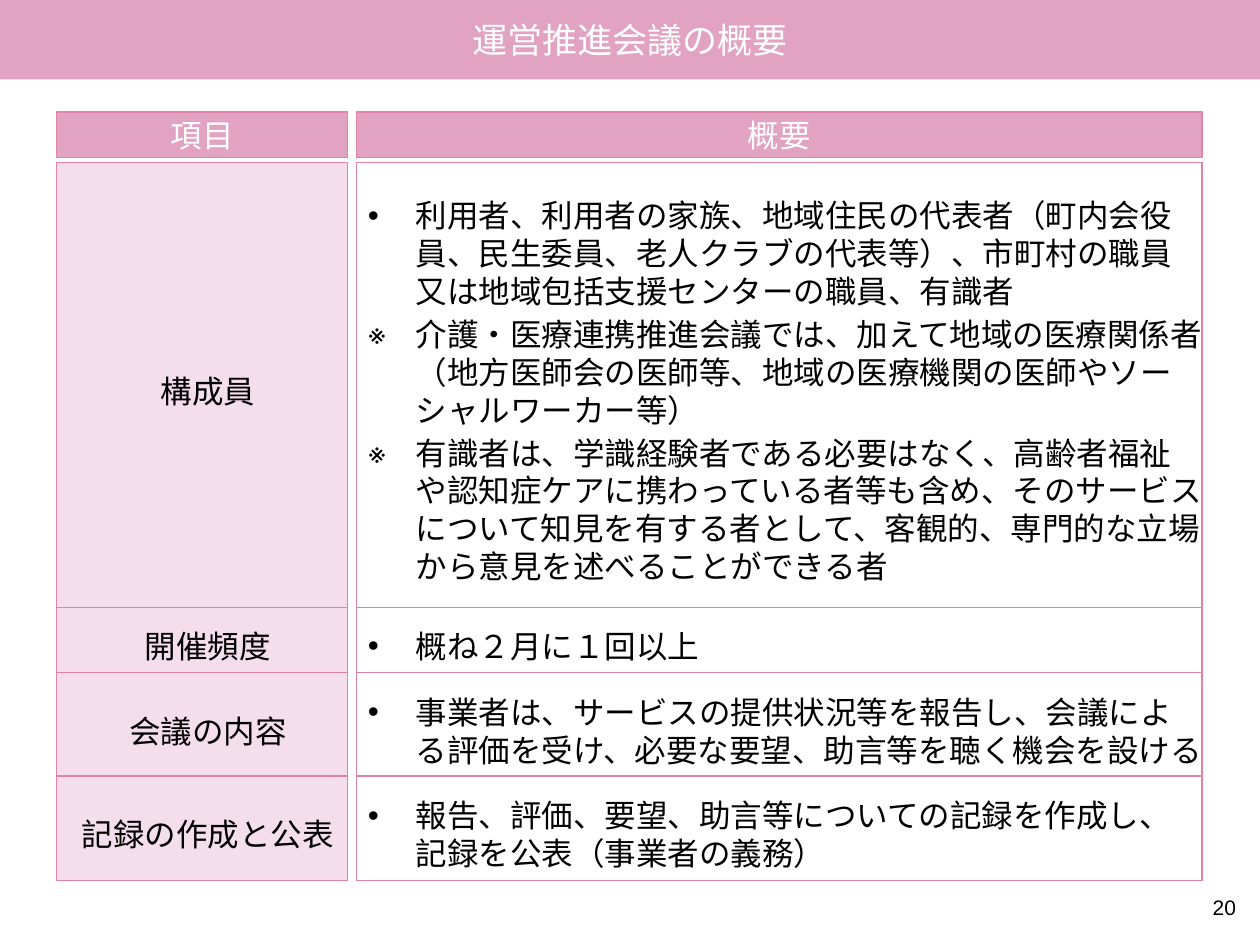
from lxml import etree
from pptx import Presentation
from pptx.dml.color import RGBColor
from pptx.enum.shapes import MSO_SHAPE
from pptx.enum.text import MSO_ANCHOR, MSO_AUTO_SIZE, PP_ALIGN
from pptx.oxml.ns import qn
from pptx.util import Inches, Pt

RECT = MSO_SHAPE.RECTANGLE
MIDDLE = MSO_ANCHOR.MIDDLE
NO_FIT = MSO_AUTO_SIZE.NONE
CENTER, LEFT, RIGHT = PP_ALIGN.CENTER, PP_ALIGN.LEFT, PP_ALIGN.RIGHT

JP_FONT = "Noto Sans CJK JP"
PINK, PALE, BORDER = "E2A3C2", "F5DEEC", "E282A8"
WHITE, BLACK = "FFFFFF", "000000"

LABEL_X, LABEL_W = 0.45, 2.31
BODY_X, BODY_W = 2.83, 6.71
HEADER_Y, HEADER_H = 0.89, 0.36
INSET = 0.09

# top, height, label, [(bullet, text), ...]
ROWS = [
    (1.29, 3.53, "構成員", [
        ("•", "利用者、利用者の家族、地域住民の代表者（町内会役員、民生委員、老人クラブの代表等）、"
              "市町村の職員又は地域包括支援センターの職員、有識者"),
        ("※", "介護・医療連携推進会議では、加えて地域の医療関係者"
              "（地方医師会の医師等、地域の医療機関の医師やソーシャルワーカー等）"),
        ("※", "有識者は、学識経験者である必要はなく、高齢者福祉や認知症ケアに携わっている者等も含め、"
              "そのサービスについて知見を有する者として、客観的、専門的な立場から意見を述べることができる者"),
    ]),
    (4.82, 0.52, "開催頻度", [("•", "概ね２月に１回以上")]),
    (5.34, 0.83, "会議の内容", [
        ("•", "事業者は、サービスの提供状況等を報告し、会議による評価を受け、"
              "必要な要望、助言等を聴く機会を設ける"),
    ]),
    (6.16, 0.83, "記録の作成と公表", [
        ("•", "報告、評価、要望、助言等についての記録を作成し、記録を公表（事業者の義務）"),
    ]),
]


def rgb(value):
    return RGBColor.from_string(value)


def set_frame(tf, inset=0):
    tf.word_wrap = True
    tf.auto_size = NO_FIT
    tf.vertical_anchor = MIDDLE
    tf.margin_left = tf.margin_top = Inches(inset)
    tf.margin_right = tf.margin_bottom = 0


def write(p, text, size, color, align, font=JP_FONT):
    p.text = text
    p.alignment = align
    p.font.size = Pt(size)
    p.font.name = font
    p.font.color.rgb = rgb(color)
    # East Asian characters take their typeface from a:ea
    etree.SubElement(p._p.pPr.find(qn("a:defRPr")), qn("a:ea"), typeface=font)


def add_bullet(p, char):
    """Give the paragraph a hanging indent and a bullet character."""
    pPr = p._p.get_or_add_pPr()
    pPr.set("marL", str(Inches(0.38)))
    pPr.set("indent", str(-Inches(0.38)))
    defaults = pPr.find(qn("a:defRPr"))
    for tag, name, value in (("a:buFont", "typeface", "Arial"), ("a:buChar", "char", char)):
        bullet = etree.Element(qn(tag))
        bullet.set(name, value)
        defaults.addprevious(bullet)


def add_box(slide, x, y, w, h, fill, inset=0):
    s = slide.shapes.add_shape(RECT, Inches(x), Inches(y), Inches(w), Inches(h))
    s.shadow.inherit = False
    s.fill.solid()
    s.fill.fore_color.rgb = rgb(fill)
    s.line.color.rgb = rgb(BORDER)
    s.line.width = Pt(0.75)
    set_frame(s.text_frame, inset)
    return s.text_frame


def add_title(slide, text):
    title = slide.shapes.title
    title.left, title.top = Inches(0), Inches(0)
    title.width, title.height = Inches(10), Inches(0.63)
    title.fill.solid()
    title.fill.fore_color.rgb = rgb(PINK)
    set_frame(title.text_frame)
    write(title.text_frame.paragraphs[0], text, 20, WHITE, CENTER)


def add_header(slide, x, w, text):
    tf = add_box(slide, x, HEADER_Y, w, HEADER_H, PINK)
    write(tf.paragraphs[0], text, 18, WHITE, CENTER)


def add_row(slide, y, h, label, items):
    tf = add_box(slide, LABEL_X, y, LABEL_W, h, PALE, INSET)
    write(tf.paragraphs[0], label, 18, BLACK, CENTER)

    tf = add_box(slide, BODY_X, y, BODY_W, h, WHITE, INSET)
    for i, (char, text) in enumerate(items):
        p = tf.add_paragraph() if i else tf.paragraphs[0]
        write(p, text, 18, BLACK, LEFT)
        p.line_spacing = Pt(21.6)
        p.space_after = Pt(3 if len(items) > 1 else 0)
        add_bullet(p, char)


def add_page_number(slide, text):
    s = slide.shapes.add_textbox(Inches(9.51), Inches(7.1), Inches(0.3), Inches(0.2))
    set_frame(s.text_frame)
    write(s.text_frame.paragraphs[0], text, 12, BLACK, RIGHT, "Arial")


def main():
    prs = Presentation()
    prs.slide_width, prs.slide_height = Inches(10), Inches(7.5)
    slide = prs.slides.add_slide(prs.slide_layouts[5])
    add_title(slide, "運営推進会議の概要")
    add_header(slide, LABEL_X, LABEL_W, "項目")
    add_header(slide, BODY_X, BODY_W, "概要")
    for row in ROWS:
        add_row(slide, *row)
    add_page_number(slide, "20")
    prs.save("out.pptx")


if __name__ == "__main__":
    main()
